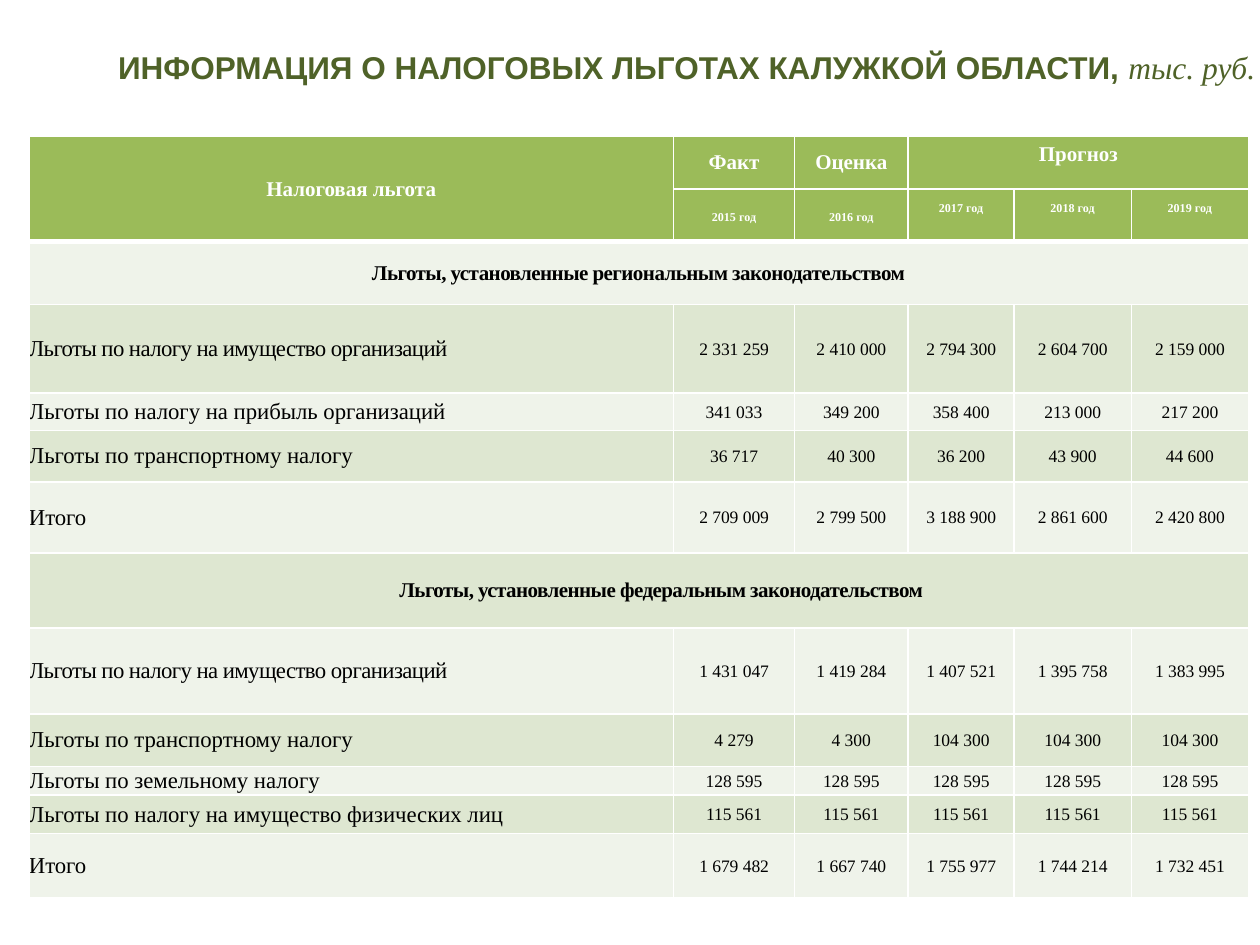
from pptx import Presentation
from pptx.dml import color
from pptx.enum import text as t
from pptx.oxml import parse_xml
from pptx.oxml import ns
from pptx.util import Pt

SERIF = "Times New Roman"
LEFT, MID = t.PP_ALIGN.LEFT, t.PP_ALIGN.CENTER
COLS = [368.5, 69, 65, 60.5, 67, 67]
ROWS = [30, 30, 36, 50.5, 21.5, 29.5, 40.5, 43, 49, 30, 16.5, 22, 36.5]
YEARS = [f"{year} год" for year in range(2015, 2020)]
DATA = [
    ("Льготы, установленные региональным законодательством",),
    ("Льготы по налогу на имущество организаций",
     "2 331 259", "2 410 000", "2 794 300", "2 604 700", "2 159 000"),
    ("Льготы по налогу на прибыль организаций",
     "341 033", "349 200", "358 400", "213 000", "217 200"),
    ("Льготы по транспортному налогу",
     "36 717", "40 300", "36 200", "43 900", "44 600"),
    ("Итого", "2 709 009", "2 799 500", "3 188 900", "2 861 600", "2 420 800"),
    ("Льготы, установленные федеральным законодательством",),
    ("Льготы по налогу на имущество организаций",
     "1 431 047", "1 419 284", "1 407 521", "1 395 758", "1 383 995"),
    ("Льготы по транспортному налогу",
     "4 279", "4 300", "104 300", "104 300", "104 300"),
    ("Льготы по земельному налогу", *["128 595"] * 5),
    ("Льготы по налогу на имущество физических лиц", *["115 561"] * 5),
    ("Итого", "1 679 482", "1 667 740", "1 755 977", "1 744 214", "1 732 451"),
]


def rgb(code):
    return color.RGBColor.from_string(code)


def write(para, words, size=12, font=SERIF, ink="000000", bold=False,
          slant=False, align=LEFT, space=0, lift=0, indent=0):
    para.alignment = align
    if indent:
        para._p.get_or_add_pPr().set("marL", str(Pt(indent)))
    run = para.add_run()
    run.text = words
    face = run.font
    face.size, face.name = Pt(size), font
    face.bold, face.italic = bold, slant
    face.color.rgb = rgb(ink)
    props = run._r.get_or_add_rPr()
    if space:
        props.set("spc", str(space))
    if lift:
        props.set("baseline", str(lift))


def edge(cell, side, width):
    cell._tc.get_or_add_tcPr().append(parse_xml(
        f'<a:{side} {ns.nsdecls("a")} w="{Pt(width)}"><a:solidFill>'
        f'<a:srgbClr val="FFFFFF"/></a:solidFill></a:{side}>'))


class Deck:
    head, bands = "9BBB59", ("EFF3EA", "DEE7D1")

    def __init__(self):
        self.file = Presentation()
        self.file.slide_width, self.file.slide_height = Pt(720), Pt(540)
        self.slide = self.file.slides.add_slide(self.file.slide_layouts[5])

    def title(self, x, y, w, h, parts):
        box = self.slide.shapes.title
        box.left, box.top, box.width, box.height = Pt(x), Pt(y), Pt(w), Pt(h)
        frame = box.text_frame
        frame.margin_left = frame.margin_right = 0
        frame.margin_top = frame.margin_bottom = 0
        frame.vertical_anchor = t.MSO_ANCHOR.TOP
        frame.word_wrap = True
        frame.auto_size = t.MSO_AUTO_SIZE.NONE
        for words, style in parts:
            write(frame.paragraphs[0], words, size=18, ink="4F6228", **style)

    def grid(self, x, y, cols, rows):
        frame = self.slide.shapes.add_table(
            len(rows), len(cols), Pt(x), Pt(y), Pt(sum(cols)), Pt(sum(rows)))
        self.table = frame.table
        for col, width in zip(self.table.columns, cols):
            col.width = Pt(width)
        for row, height in zip(self.table.rows, rows):
            row.height = Pt(height)
        for r in range(len(rows)):
            for c in range(len(cols)):
                cell = self.table.cell(r, c)
                for side in ("lnL", "lnR", "lnT", "lnB"):
                    thick = (r, side) in ((1, "lnB"), (2, "lnT"))
                    thick = thick or (r, c, side) == (0, 0, "lnB")
                    edge(cell, side, 3 if thick else 1)
                cell.fill.solid()
                cell.fill.fore_color.rgb = rgb(
                    self.head if r < 2 else self.bands[r % 2])

    def cell(self, r, c, words, pad=0, low=0, span=None, **style):
        cell = self.table.cell(r, c)
        if span:
            cell.merge(self.table.cell(*span))
        cell.margin_left = cell.margin_right = cell.margin_top = Pt(pad)
        cell.margin_bottom = Pt(low)
        cell.vertical_anchor = (
            t.MSO_ANCHOR.BOTTOM if low else t.MSO_ANCHOR.MIDDLE)
        write(cell.text_frame.paragraphs[0], words, **style)

    def top(self, r, c, words, **style):
        self.cell(r, c, words, ink="FFFFFF", bold=True, align=MID, **style)


def main():
    deck = Deck()
    deck.title(67.5, 27.5, 652.5, 21.5, [
        ("ИНФОРМАЦИЯ О НАЛОГОВЫХ ЛЬГОТАХ КАЛУЖКОЙ ОБЛАСТИ, ",
         dict(font="Arial", bold=True)),
        ("тыс. руб.", dict(slant=True))])
    deck.grid(16.5, 78, COLS, ROWS)
    deck.top(0, 0, "Налоговая льгота", span=(1, 0))
    deck.top(0, 1, "Факт")
    deck.top(0, 2, "Оценка")
    deck.top(0, 3, "Прогноз", low=13, span=(0, 5))
    for c, year in enumerate(YEARS, 1):
        deck.top(1, c, year, lift=6000, low=13 if c > 2 else 0)
    after = False
    for r, (name, *values) in enumerate(DATA, 2):
        if values:
            deck.cell(r, 0, name, size=13, space=-30 if after else 0)
        else:
            deck.cell(r, 0, name, span=(r, 5), bold=True, align=MID,
                      space=-30, indent=26 if r > 2 else 0)
        for c, value in enumerate(values, 1):
            deck.cell(r, c, value, pad=0.7, size=10, align=MID)
        after = not values
    deck.file.save("out.pptx")


if __name__ == "__main__":
    main()
